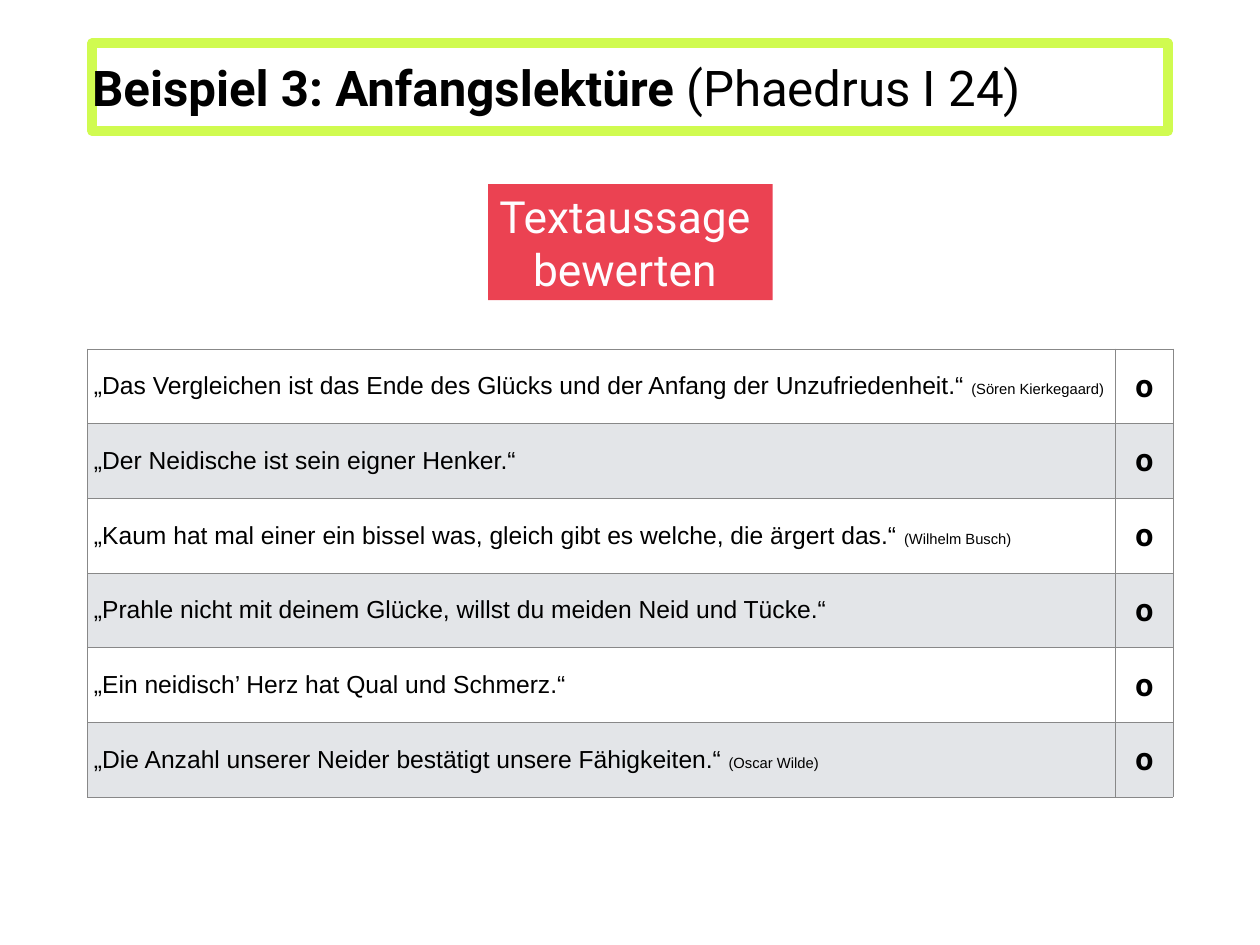
"""Build the slide on judging the message of Phaedrus I 24."""
from dataclasses import dataclass

from lxml import etree
from pptx import Presentation
from pptx.dml.color import RGBColor
from pptx.enum.shapes import MSO_SHAPE
from pptx.enum.text import MSO_ANCHOR, MSO_AUTO_SIZE, PP_ALIGN
from pptx.oxml.ns import qn
from pptx.util import Inches, Pt

RECT = MSO_SHAPE.RECTANGLE
MIDDLE = MSO_ANCHOR.MIDDLE
GROW = MSO_AUTO_SIZE.SHAPE_TO_FIT_TEXT
LEFT, CENTER = PP_ALIGN.LEFT, PP_ALIGN.CENTER


@dataclass(frozen=True)
class Theme:
    black: str = "000000"
    white: str = "FFFFFF"
    label: str = "FEFDFF"
    lime: str = "D0FB50"
    red: str = "EB4252"
    band: str = "E3E5E8"
    rule: str = "888888"
    head: str = "Roboto"
    body: str = "Arial"
    title: int = 40
    task: int = 36
    mark: int = 26
    quote: int = 20
    source: int = 12


theme = Theme()


def color(code):
    return RGBColor.from_string(code)


def write(para, text, *, size, font=theme.head, ink=theme.black, bold=False,
          align=LEFT, before=0):
    para.alignment = align
    para.space_before = Pt(before)
    run = para.add_run()
    run.text = text
    run.font.name = font
    run.font.size = Pt(size)
    run.font.bold = bold
    run.font.color.rgb = color(ink)


deck = Presentation()
deck.slide_width, deck.slide_height = Inches(14.22), Inches(10.67)
slide = deck.slides.add_slide(deck.slide_layouts[6])

title = slide.shapes.add_shape(RECT, Inches(1.04), Inches(0.49), Inches(12.14), Inches(0.99))
title.fill.background()
title.line.color.rgb = color(theme.lime)
title.line.width = Pt(8)

task = slide.shapes.add_shape(RECT, Inches(5.51), Inches(2.08), Inches(3.21), Inches(1.31))
task.fill.solid()
task.fill.fore_color.rgb = color(theme.red)
task.line.fill.background()

for box in (title, task):
    box.shadow.inherit = False
    frame = box.text_frame
    frame.vertical_anchor = MIDDLE
    frame.margin_left = frame.margin_right = frame.margin_top = frame.margin_bottom = 0

title.text_frame.word_wrap = True
head = title.text_frame.paragraphs[0]
write(head, "Beispiel 3: Anfangslektüre ", size=theme.title, bold=True)
write(head, "(Phaedrus I 24)", size=theme.title)

frame = task.text_frame
frame.word_wrap = False
frame.auto_size = GROW
for para, text in zip((frame.paragraphs[0], frame.add_paragraph()), ("Textaussage ", "bewerten ")):
    write(para, text, size=theme.task, ink=theme.label, align=CENTER)

quotes = [
    ("„Das Vergleichen ist das Ende des Glücks und der Anfang der Unzufriedenheit.“",
     "(Sören Kierkegaard)"),
    ("„Der Neidische ist sein eigner Henker.“", ""),
    ("„Kaum hat mal einer ein bissel was, gleich gibt es welche, die ärgert das.“",
     "(Wilhelm Busch)"),
    ("„Prahle nicht mit deinem Glücke, willst du meiden Neid und Tücke.“", ""),
    ("„Ein neidisch’ Herz hat Qual und Schmerz.“", ""),
    ("„Die Anzahl unserer Neider bestätigt unsere Fähigkeiten.“", "(Oscar Wilde)"),
]
table = slide.shapes.add_table(
    len(quotes), 2, Inches(0.99), Inches(3.94), Inches(12.25), Inches(5.06)).table
table.first_row = table.horz_banding = False
for col, width in zip(table.columns, (11.6, 0.65)):
    col.width = Inches(width)

for row, (quote, source) in enumerate(quotes):
    for cell in table.rows[row].cells:
        cell.vertical_anchor = MIDDLE
        cell.margin_left = cell.margin_right = Inches(0.07)
        cell.margin_top = cell.margin_bottom = 0
        props = cell._tc.get_or_add_tcPr()
        for side in ("a:lnL", "a:lnR", "a:lnT", "a:lnB"):
            line = etree.SubElement(props, qn(side), w=str(Pt(0.5)))
            fill = etree.SubElement(line, qn("a:solidFill"))
            etree.SubElement(fill, qn("a:srgbClr"), val=theme.rule)
        cell.fill.solid()
        cell.fill.fore_color.rgb = color(theme.band if row % 2 else theme.white)

    para = table.cell(row, 0).text_frame.paragraphs[0]
    write(para, quote + (" " if source else ""), size=theme.quote, font=theme.body, before=5)
    if source:
        write(para, source, size=theme.source, font=theme.body, before=5)
    write(table.cell(row, 1).text_frame.paragraphs[0], "o", size=theme.mark, bold=True,
          align=CENTER)

deck.save("out.pptx")
